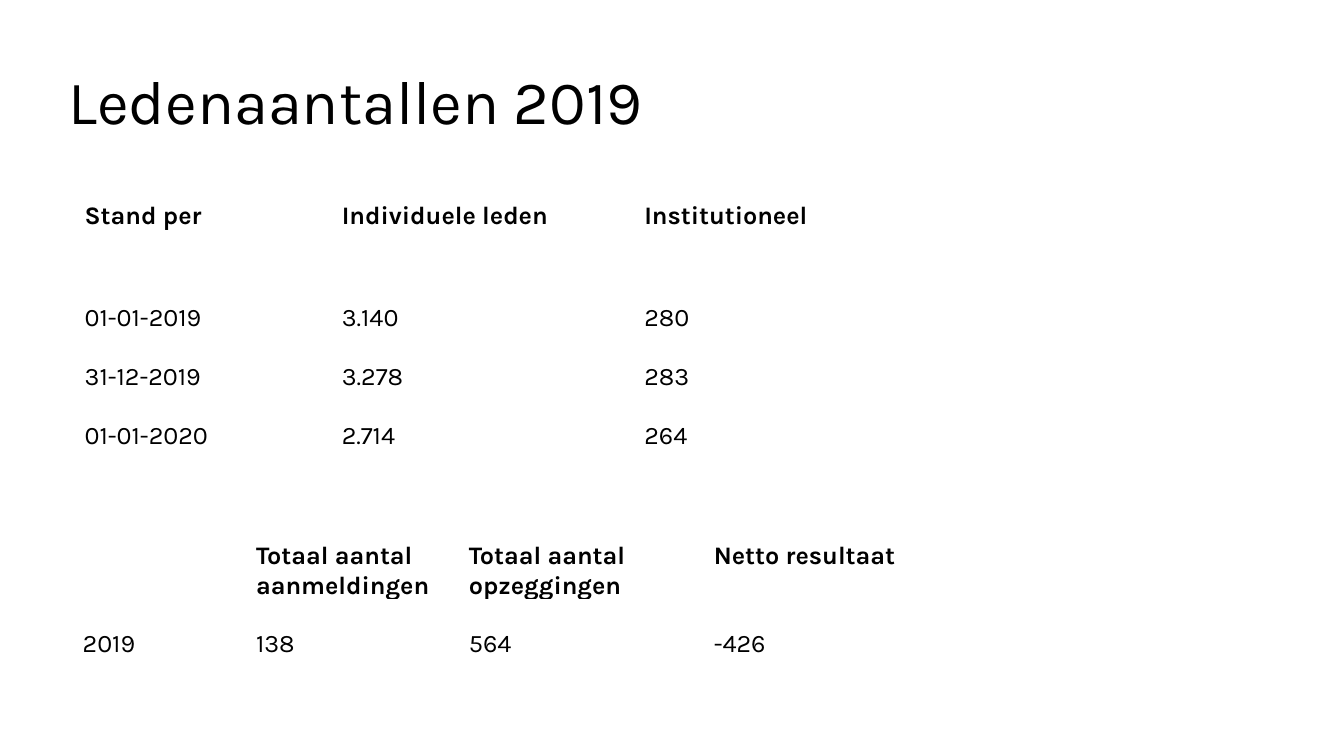
from dataclasses import dataclass

from lxml import etree
from pptx import Presentation
from pptx.dml.color import RGBColor
from pptx.enum import text
from pptx.oxml import ns
from pptx.util import Inches, Pt


@dataclass(frozen=True)
class Theme:
    font: str = "Karla"
    ink: RGBColor = RGBColor(0, 0, 0)
    paper: RGBColor = RGBColor(255, 255, 255)
    title: int = 44
    body: int = 18


THEME = Theme()
TOP, MIDDLE, BOTTOM = (text.MSO_ANCHOR.TOP, text.MSO_ANCHOR.MIDDLE,
                       text.MSO_ANCHOR.BOTTOM)


def add_run(p, words, size, bold=False):
    r = p.add_run()
    r.text = words
    r.font.name = THEME.font
    r.font.size = Pt(size)
    r.font.bold = bold
    r.font.color.rgb = THEME.ink


def set_borders(cell, bottom):
    """Draw 1 pt sides and a bottom line of the given width in points."""
    tc_pr = cell._tc.get_or_add_tcPr()
    for side, width in (("L", 1), ("R", 1), ("T", 1), ("B", bottom)):
        line = etree.SubElement(tc_pr, ns.qn(f"a:ln{side}"), w=str(Pt(width)))
        fill = etree.SubElement(line, ns.qn("a:solidFill"))
        etree.SubElement(fill, ns.qn("a:srgbClr"), val=str(THEME.paper))


prs = Presentation()
prs.slide_width, prs.slide_height = Inches(13.33), Inches(7.5)
s = prs.slides.add_slide(prs.slide_layouts[5])

title = s.shapes.title
title.left, title.top = Inches(0.58), Inches(0.53)
title.width, title.height = Inches(11.5), Inches(1.01)
tf = title.text_frame
tf.vertical_anchor = MIDDLE
p = tf.paragraphs[0]
p.alignment = text.PP_ALIGN.LEFT
p.line_spacing = 0.9
add_run(p, "Ledenaantallen 2019", THEME.title)

# Each table: left, top, column widths, row heights, header anchors, rows of cells.
tables = [
    (0.79, 1.58, [2.55, 3, 2.93, 1.74, 0.57], [1.13, 0.59, 1.17],
     [MIDDLE] * 5,
     [[["Stand per"], ["Individuele leden"], ["Institutioneel"], [], []],
      [["01-01-2019"], ["3.140"], ["280"], [], []],
      [["31-12-2019", "01-01-2020"], ["3.278", "2.714"], ["283", "264"], [], []]]),
    (0.77, 5.37, [1.72, 2.11, 2.43, 3.89], [0.58, 0.58],
     [BOTTOM, BOTTOM, BOTTOM, TOP],
     [[[], ["Totaal aantal aanmeldingen"], ["Totaal aantal opzeggingen"],
       ["Netto resultaat"]],
      [["2019"], ["138"], ["564"], ["-426"]]]),
]

for left, top, widths, heights, header_anchors, rows in tables:
    frame = s.shapes.add_table(len(rows), len(widths), Inches(left), Inches(top),
                               Inches(sum(widths)), Inches(sum(heights)))
    table = frame.table
    table.horz_banding = False
    for column, width in zip(table.columns, widths):
        column.width = Inches(width)
    for i, (row, height) in enumerate(zip(rows, heights)):
        table.rows[i].height = Inches(height)
        header = i == 0
        for j, lines in enumerate(row):
            cell = table.cell(i, j)
            set_borders(cell, 3 if header else 1)
            cell.fill.background()
            cell.margin_left = cell.margin_right = Inches(0.05)
            cell.margin_top = cell.margin_bottom = 0
            cell.vertical_anchor = header_anchors[j] if header else BOTTOM
            tf = cell.text_frame
            for k, words in enumerate(lines):
                p = tf.add_paragraph() if k else tf.paragraphs[0]
                if k:
                    p.space_before = Pt(21)
                add_run(p, words, THEME.body, bold=header)

prs.save("out.pptx")
